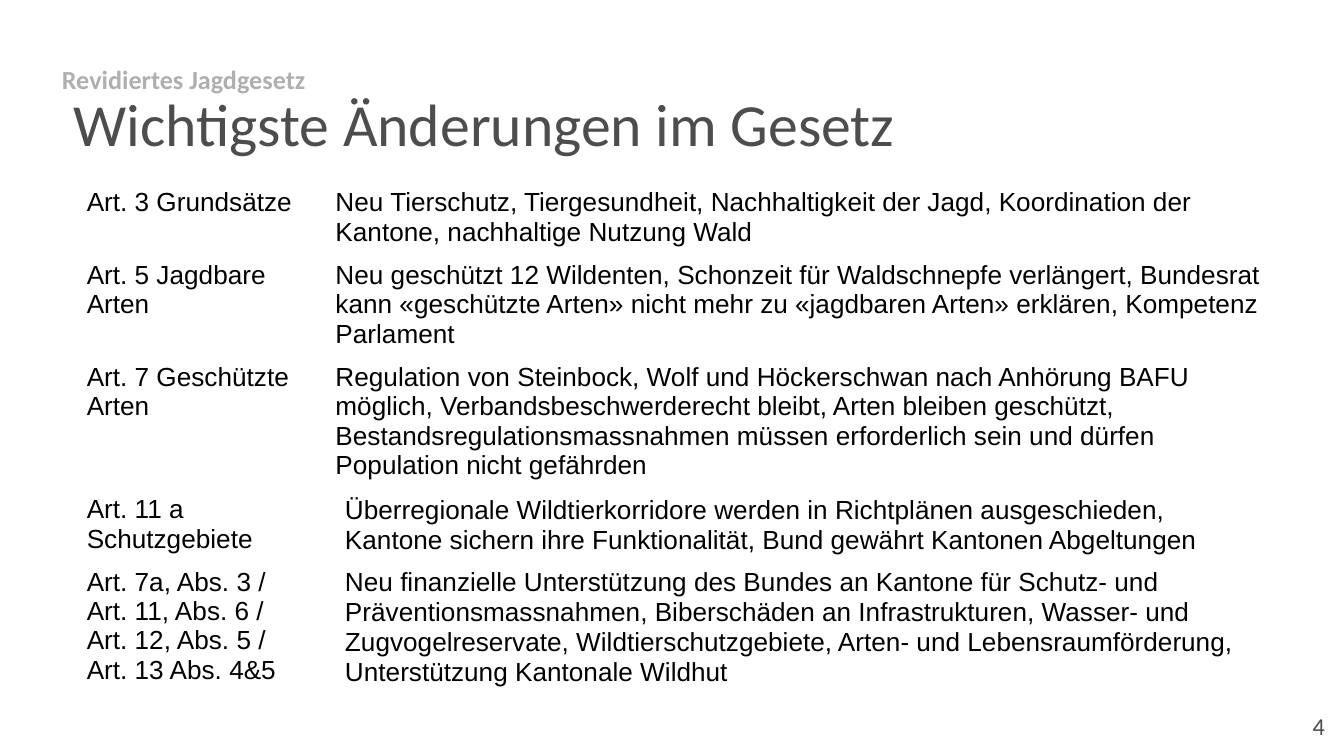
from dataclasses import dataclass

from pptx import Presentation
from pptx.dml.color import RGBColor
from pptx.enum.text import MSO_ANCHOR as Anchor, PP_ALIGN as Align
from pptx.slide import Slide
from pptx.util import Cm, Length, Pt


@dataclass(frozen=True)
class Style:
    font: str
    size: int
    color: str
    bold: bool = False


@dataclass(frozen=True)
class Theme:
    title: Style = Style("Calibri", 32, "4D4D4D")
    kicker: Style = Style("Calibri", 14, "AFAFAF", True)
    number: Style = Style("Calibri", 13, "4D4D4D")
    body: Style = Style("Arial", 14, "000000")


@dataclass(frozen=True)
class Label:
    text: str
    style: Style
    left: Length
    top: Length
    width: Length
    height: Length
    inset: Length = Cm(0)
    align: Align = Align.LEFT
    anchor: Anchor = Anchor.TOP
    line_spacing: float = 1.0


@dataclass(frozen=True)
class Article:
    name: str
    change: str
    lines: int
    indented: bool = False


THEME = Theme()

LABELS = [
    Label("4", THEME.number, Cm(23.77), Cm(13.18), Cm(1.52), Cm(1.09),
          inset=Cm(0.25), align=Align.RIGHT, anchor=Anchor.MIDDLE),
    Label("Revidiertes Jagdgesetz", THEME.kicker, Cm(1.17), Cm(0.84), Cm(22.6), Cm(0.79),
          line_spacing=1.61),
    Label("Wichtigste Änderungen im Gesetz", THEME.title,
          Cm(1.39), Cm(1.65), Cm(23.75), Cm(1.27)),
]

ARTICLES = [
    Article("Art. 3 Grundsätze",
            "Neu Tierschutz, Tiergesundheit, Nachhaltigkeit der Jagd, Koordination der "
            "Kantone, nachhaltige Nutzung Wald", 2),
    Article("Art. 5 Jagdbare Arten",
            "Neu geschützt 12 Wildenten, Schonzeit für Waldschnepfe verlängert, Bundesrat "
            "kann «geschützte Arten» nicht mehr zu «jagdbaren Arten» erklären, Kompetenz "
            "Parlament", 3),
    Article("Art. 7 Geschützte Arten",
            "Regulation von Steinbock, Wolf und Höckerschwan nach Anhörung BAFU möglich, "
            "Verbandsbeschwerderecht bleibt, Arten bleiben geschützt, "
            "Bestandsregulationsmassnahmen müssen erforderlich sein und dürfen Population "
            "nicht gefährden", 4),
    Article("Art. 11 a Schutzgebiete",
            "Überregionale Wildtierkorridore werden in Richtplänen ausgeschieden, Kantone "
            "sichern ihre Funktionalität, Bund gewährt Kantonen Abgeltungen", 2, True),
    Article("Art. 7a, Abs. 3 / Art. 11, Abs. 6 / Art. 12, Abs. 5 / Art. 13 Abs. 4&5",
            "Neu finanzielle Unterstützung des Bundes an Kantone für Schutz- und "
            "Präventionsmassnahmen, Biberschäden an Infrastrukturen, Wasser- und "
            "Zugvogelreservate, Wildtierschutzgebiete, Arten- und Lebensraumförderung, "
            "Unterstützung Kantonale Wildhut", 4, True),
]

COLUMN_WIDTHS = [Cm(4.7), Cm(18.44)]
LINE_HEIGHT = Cm(0.56)
ROW_PADDING = Cm(0.25)
CELL_INSET = Cm(0.25)
CHANGE_INDENT = Cm(0.18)
CHANGE_RIGHT_INDENT = Cm(0.4)


def write(frame, text: str, style: Style):
    """Fill a text frame with one styled paragraph and return it."""
    para = frame.paragraphs[0]
    para.text = text
    font = para.font
    font.name, font.size, font.bold = style.font, Pt(style.size), style.bold
    font.color.rgb = RGBColor.from_string(style.color)
    return para


def add_label(page: Slide, label: Label) -> None:
    box = page.shapes.add_textbox(label.left, label.top, label.width, label.height)
    frame = box.text_frame
    frame.word_wrap = True
    frame.vertical_anchor = label.anchor
    frame.margin_left = frame.margin_right = label.inset
    frame.margin_top = frame.margin_bottom = label.inset
    para = write(frame, label.text, label.style)
    para.alignment = label.align
    para.line_spacing = label.line_spacing


def add_articles(page: Slide, articles: list[Article]) -> None:
    heights = [LINE_HEIGHT * article.lines + ROW_PADDING for article in articles]
    table = page.shapes.add_table(
        len(articles), len(COLUMN_WIDTHS), Cm(1.39), Cm(3.43),
        sum(COLUMN_WIDTHS), sum(heights)).table
    table.first_row = table.horz_banding = False
    for column, width in zip(table.columns, COLUMN_WIDTHS):
        column.width = width
    # The "No Style, No Grid" table style leaves the cells without borders.
    table._tbl.tblPr[0].text = "{2D5ABB26-0587-4C30-8999-92F81FD0307C}"
    for row, article, height in zip(table.rows, articles, heights):
        row.height = height
        for cell, text in zip(row.cells, (article.name, article.change)):
            cell.fill.background()
            cell.margin_left = cell.margin_right = CELL_INSET
            cell.margin_bottom = Cm(0)
            para = write(cell.text_frame, text, THEME.body)
        if article.indented:
            cell.margin_left = CELL_INSET + CHANGE_INDENT
            cell.margin_right = CELL_INSET + CHANGE_RIGHT_INDENT
            para.line_spacing = 1.02
            para.space_before = Pt(0.1)


def main() -> None:
    deck = Presentation()
    deck.slide_width, deck.slide_height = Cm(25.4), Cm(14.29)
    page = deck.slides.add_slide(deck.slide_layouts[6])
    for label in LABELS:
        add_label(page, label)
    add_articles(page, ARTICLES)
    deck.save("out.pptx")


if __name__ == "__main__":
    main()
